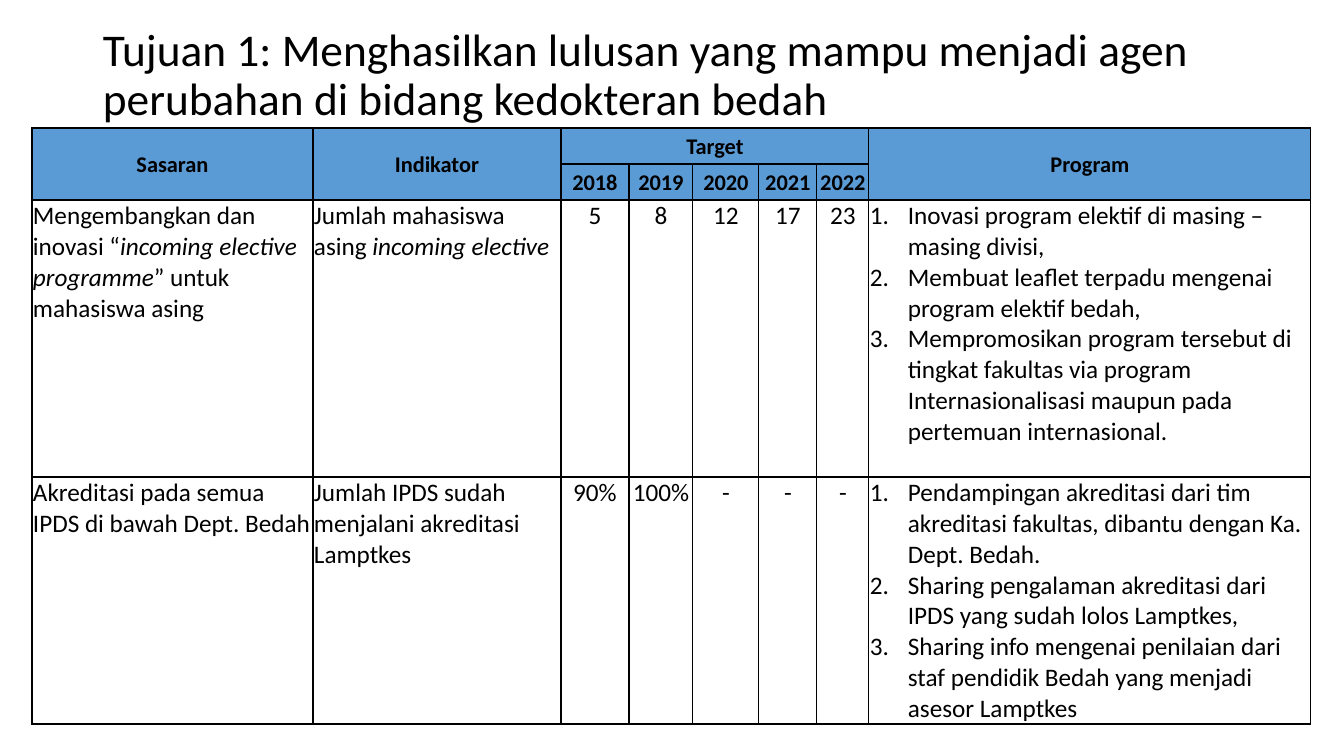
from dataclasses import dataclass

from lxml import etree
from pptx import Presentation
from pptx import util as u
from pptx.dml.color import RGBColor
from pptx.enum import text
from pptx.oxml.ns import qn

# Content: a cell is a list of paragraphs, a paragraph a list of (words, italic)
TITLE = ("Tujuan 1: Menghasilkan lulusan yang mampu menjadi agen "
         "perubahan di bidang kedokteran bedah")
YEARS = ["2018", "2019", "2020", "2021", "2022"]
GOALS = [
    {
        "sasaran": [("Mengembangkan dan inovasi “", False),
                    ("incoming elective programme", True),
                    ("” untuk mahasiswa asing", False)],
        "indikator": [("Jumlah mahasiswa asing ", False),
                      ("incoming elective", True)],
        "target": ["5", "8", "12", "17", "23"],
        "program": [
            "Inovasi program elektif di masing – masing divisi,",
            "Membuat leaflet terpadu mengenai program elektif bedah,",
            "Mempromosikan program tersebut di tingkat fakultas via program "
            "Internasionalisasi maupun pada pertemuan internasional.",
        ],
    },
    {
        "sasaran": [("Akreditasi pada semua IPDS di bawah Dept. Bedah", False)],
        "indikator": [("Jumlah IPDS sudah menjalani akreditasi Lamptkes", False)],
        "target": ["90%", "100%", "-", "-", "-"],
        "program": [
            "Pendampingan akreditasi dari tim akreditasi fakultas, "
            "dibantu dengan Ka. Dept. Bedah.",
            "Sharing pengalaman akreditasi dari IPDS yang sudah lolos Lamptkes,",
            "Sharing info mengenai penilaian dari staf pendidik Bedah "
            "yang menjadi asesor Lamptkes",
        ],
    },
]

# Lengths in px
SLIDE = (1344, 756)
TITLE_BOX = (93, 40, 1159, 72)
TABLE_AT = (32, 128)
COLUMNS = [281, 248, 68, 64, 66, 58, 52, 442]
ROWS = [36, 36, 277, 247]
INDENT = 38
FIRST_YEAR = 2
PROGRAM = FIRST_YEAR + len(YEARS)


@dataclass(frozen=True)
class Theme:
    font: str = "Calibri"
    ink: str = "000000"
    header: str = "5B9BD5"
    title_size: float = 32.4
    header_size: int = 16
    body_size: int = 18
    border: int = 1


THEME = Theme()


def px(length):
    return u.Emu(round(length * 914400 / 100.8))


def style(run, size, bold=False, italic=False):
    run.font.name = THEME.font
    run.font.size = u.Pt(size)
    run.font.bold = bold
    run.font.italic = italic
    run.font.color.rgb = RGBColor.from_string(THEME.ink)


def number(paragraph):
    props = paragraph._p.get_or_add_pPr()
    props.set("marL", str(px(INDENT)))
    props.set("indent", str(-px(INDENT)))
    etree.SubElement(props, qn("a:buFont"), typeface="+mj-lt")
    etree.SubElement(props, qn("a:buAutoNum"), type="arabicPeriod")


def frame(cell):
    props = cell._tc.get_or_add_tcPr()
    for place, side in enumerate(("a:lnL", "a:lnR", "a:lnT", "a:lnB")):
        line = etree.Element(qn(side), w=str(u.Pt(THEME.border)))
        fill = etree.SubElement(line, qn("a:solidFill"))
        etree.SubElement(fill, qn("a:srgbClr"), val=THEME.ink)
        props.insert(place, line)


def write(cell, paragraphs, size=THEME.body_size, bold=False,
          centred=False, numbered=False):
    for index, pieces in enumerate(paragraphs):
        frame_ = cell.text_frame
        paragraph = frame_.add_paragraph() if index else frame_.paragraphs[0]
        if numbered:
            number(paragraph)
        paragraph.alignment = text.PP_ALIGN.CENTER if centred else text.PP_ALIGN.LEFT
        for words, italic in pieces:
            run = paragraph.add_run()
            run.text = words
            style(run, size, bold, italic)


def add_title(slide):
    box = slide.shapes.add_textbox(*map(px, TITLE_BOX)).text_frame
    box.word_wrap = True
    box.vertical_anchor = text.MSO_ANCHOR.MIDDLE
    box.text = TITLE
    box.paragraphs[0].line_spacing = 0.9
    style(box.paragraphs[0].runs[0], THEME.title_size)


def add_targets(slide):
    size = (sum(COLUMNS), sum(ROWS))
    table = slide.shapes.add_table(len(ROWS), len(COLUMNS),
                                   *map(px, TABLE_AT + size)).table
    table.first_row = table.horz_banding = False
    for column, width in zip(table.columns, COLUMNS):
        column.width = px(width)
    for row, height in zip(table.rows, ROWS):
        row.height = px(height)

    # Fills, margins and borders
    for r in range(len(ROWS)):
        for c in range(len(COLUMNS)):
            cell = table.cell(r, c)
            cell.margin_left = cell.margin_right = cell.margin_top = px(1)
            cell.margin_bottom = 0
            if r < 2:
                cell.fill.solid()
                cell.fill.fore_color.rgb = RGBColor.from_string(THEME.header)
                cell.vertical_anchor = text.MSO_ANCHOR.MIDDLE
            else:
                cell.fill.background()
                cell.vertical_anchor = text.MSO_ANCHOR.TOP
            frame(cell)

    # Header
    headings = [("Sasaran", 0, 0, 1), ("Indikator", 1, 1, 1),
                ("Target", FIRST_YEAR, PROGRAM - 1, 0),
                ("Program", PROGRAM, PROGRAM, 1)]
    for heading, first, last, bottom in headings:
        table.cell(0, first).merge(table.cell(bottom, last))
        write(table.cell(0, first), [[(heading, False)]],
              THEME.header_size, bold=True, centred=True)
    for c, year in enumerate(YEARS, FIRST_YEAR):
        write(table.cell(1, c), [[(year, False)]],
              THEME.header_size, bold=True, centred=True)

    # Goals
    for r, goal in enumerate(GOALS, 2):
        write(table.cell(r, 0), [goal["sasaran"]])
        write(table.cell(r, 1), [goal["indikator"]])
        for c, target in enumerate(goal["target"], FIRST_YEAR):
            write(table.cell(r, c), [[(target, False)]], centred=True)
        write(table.cell(r, PROGRAM),
              [[(step, False)] for step in goal["program"]], numbered=True)


def main():
    deck = Presentation()
    deck.slide_width, deck.slide_height = map(px, SLIDE)
    slide = deck.slides.add_slide(deck.slide_layouts[6])
    add_title(slide)
    add_targets(slide)
    deck.save("out.pptx")


if __name__ == "__main__":
    main()
